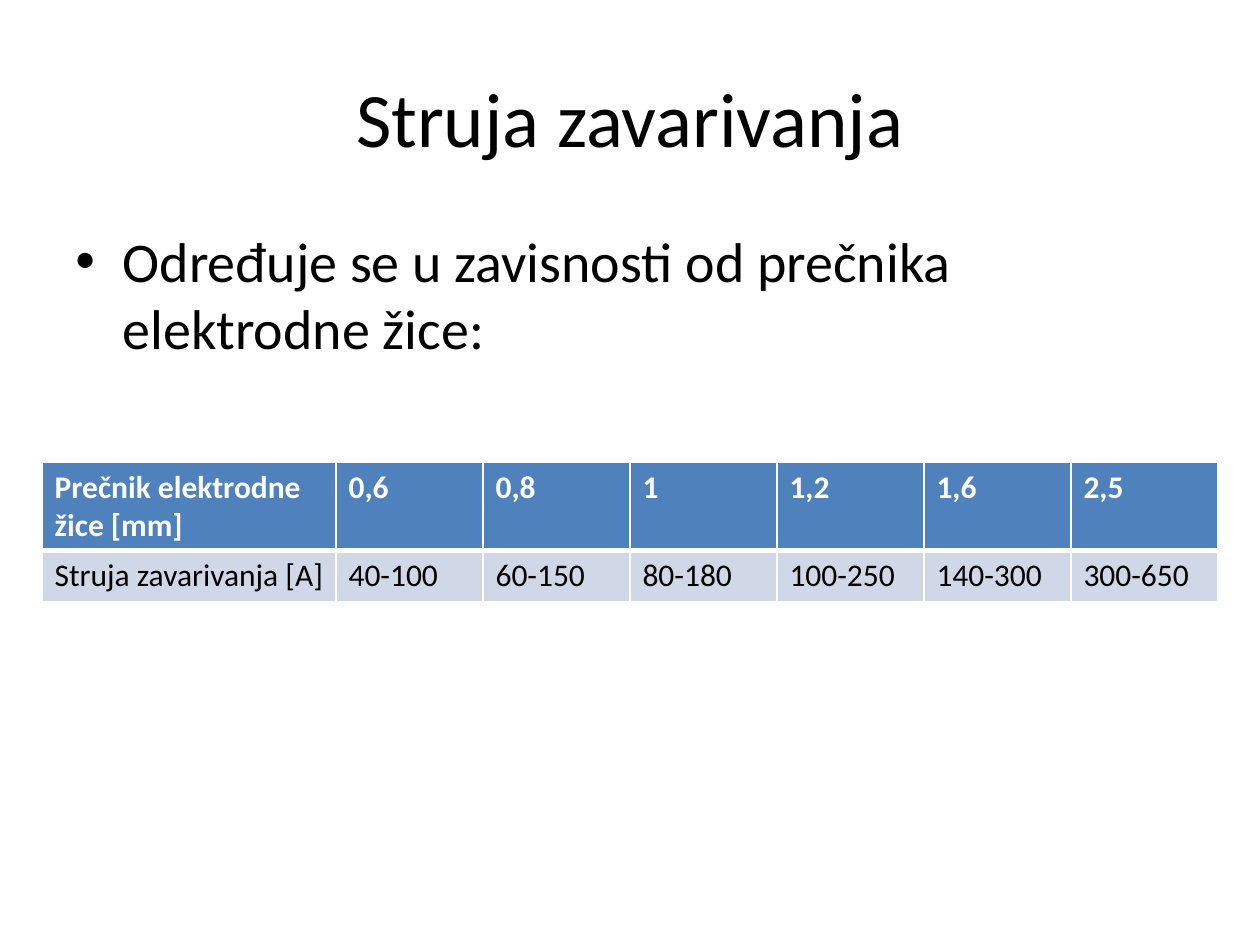
import dataclasses

import lxml.etree
import pptx
import pptx.dml.color
import pptx.enum.text
import pptx.oxml.ns
import pptx.util

Pt = pptx.util.Pt
Align = pptx.enum.text.PP_ALIGN
Anchor = pptx.enum.text.MSO_ANCHOR


@dataclasses.dataclass(frozen=True)
class Theme:
    font: str = "Calibri"
    ink: str = "000000"
    paper: str = "FFFFFF"
    header: str = "4F81BD"
    band: str = "D0D8E8"
    title_size: float = 44
    body_size: float = 32
    table_size: float = 18
    rule: float = 1
    header_rule: float = 3


THEME = Theme()

CURRENTS = [
    ("Prečnik elektrodne žice [mm]", "Struja zavarivanja [A]"),
    ("0,6", "40-100"),
    ("0,8", "60-150"),
    ("1", "80-180"),
    ("1,2", "100-250"),
    ("1,6", "140-300"),
    ("2,5", "300-650"),
]


def rgb(colour):
    return pptx.dml.color.RGBColor.from_string(colour)


def add_child(parent, tag, **attributes):
    return lxml.etree.SubElement(parent, pptx.oxml.ns.qn(tag), attributes)


def write(frame, text, *, size, colour=THEME.ink, bold=False,
          align=Align.LEFT, anchor=Anchor.TOP, bullet=None, indent=0, before=0):
    frame.word_wrap = True
    frame.vertical_anchor = anchor
    paragraph = frame.paragraphs[0]
    paragraph.alignment = align
    paragraph.space_before = Pt(before)
    run = paragraph.add_run()
    run.text = text
    run.font.name = THEME.font
    run.font.size = Pt(size)
    run.font.bold = bold
    run.font.color.rgb = rgb(colour)
    if bullet:
        properties = paragraph._p.get_or_add_pPr()
        properties.set("marL", str(Pt(indent)))
        properties.set("indent", str(-Pt(indent)))
        add_child(properties, "a:buFont", typeface="Arial")
        add_child(properties, "a:buChar", char=bullet)


def add_title(slide, box):
    title = slide.shapes.add_textbox(*map(Pt, box))
    write(title.text_frame, "Struja zavarivanja", size=THEME.title_size,
          align=Align.CENTER, anchor=Anchor.MIDDLE)


def add_body(slide, box):
    body = slide.shapes.add_textbox(*map(Pt, box))
    write(body.text_frame, "Određuje se u zavisnosti od prečnika elektrodne žice:",
          size=THEME.body_size, bullet="•", indent=27, before=0.2 * THEME.body_size)


def draw_borders(cell, **widths):
    properties = cell._tc.get_or_add_tcPr()
    for side in "LRTB":
        line = add_child(properties, f"a:ln{side}", w=str(Pt(widths.get(side, THEME.rule))))
        add_child(add_child(line, "a:solidFill"), "a:srgbClr", val=THEME.paper)


def add_currents(slide, box):
    left, top, width, height = box
    table = slide.shapes.add_table(2, len(CURRENTS), *map(Pt, box)).table
    unit = width / (len(CURRENTS) + 1)
    header_height = 50.4
    table.rows[0].height = Pt(header_height)
    table.rows[1].height = Pt(height - header_height)
    for index, (diameter, current) in enumerate(CURRENTS):
        table.columns[index].width = Pt(unit if index else 2 * unit)
        header, value = table.cell(0, index), table.cell(1, index)
        draw_borders(header, B=THEME.header_rule)
        draw_borders(value, T=THEME.header_rule)
        for cell, text, fill, colour in (
            (header, diameter, THEME.header, THEME.paper),
            (value, current, THEME.band, THEME.ink),
        ):
            cell.fill.solid()
            cell.fill.fore_color.rgb = rgb(fill)
            write(cell.text_frame, text, size=THEME.table_size,
                  colour=colour, bold=cell is header)


def main():
    deck = pptx.Presentation()
    deck.slide_width, deck.slide_height = Pt(720), Pt(540)
    slide = deck.slides.add_slide(deck.slide_layouts[6])
    slide.background.fill.solid()
    slide.background.fill.fore_color.rgb = rgb(THEME.paper)
    add_title(slide, (36, 21.6, 648, 90))
    add_body(slide, (36, 126, 648, 356.4))
    add_currents(slide, (24, 264, 672, 79.6))
    deck.save("out.pptx")


if __name__ == "__main__":
    main()
